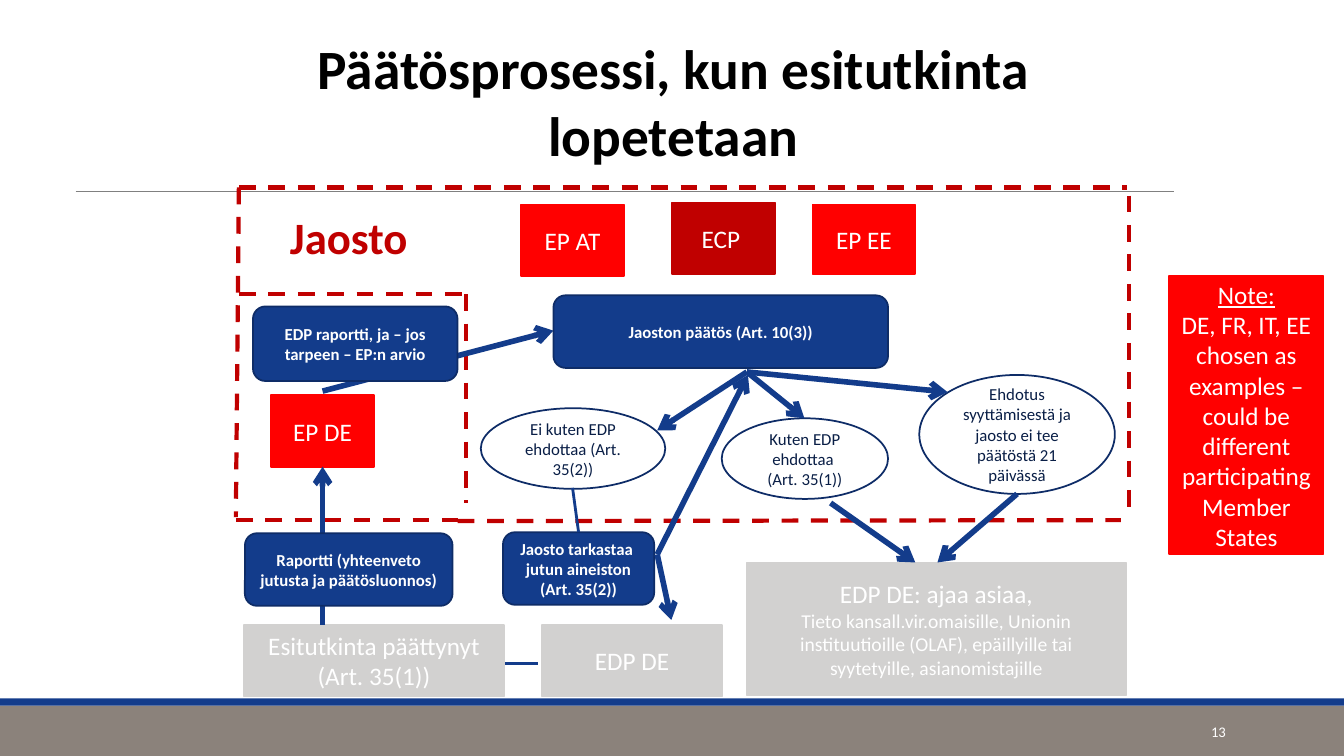
"""Builds the slide on the decision process when an investigation ends."""
from lxml.etree import SubElement
from pptx import Presentation
from pptx.dml.color import RGBColor
from pptx.enum.dml import MSO_LINE
from pptx.enum.shapes import MSO_CONNECTOR, MSO_SHAPE
from pptx.enum.text import MSO_ANCHOR, PP_ALIGN
from pptx.oxml.ns import qn
from pptx.util import Inches, Pt

COLS, ROWS, CELL = 133.33, 75, 0.1
FONT = "Calibri"
COLORS = {
    "white": "FFFFFF", "black": "000000", "blue": "133C8B", "navy": "0E2C67",
    "ink": "091E46", "red": "FF0000", "dark": "C00000", "gray": "D2D1D0",
    "rule": "808080", "foot": "8B827B",
}


def grid(count):
    """Turn a count of grid cells into a length."""
    return Inches(count * CELL)


def color(name):
    """Look up a colour by name."""
    return RGBColor.from_string(COLORS[name])


def write(frame, paras, ink, size, bold=False, align=PP_ALIGN.CENTER):
    """Fill a frame; a paragraph is a text or a (text, changes) pair."""
    for index, para in enumerate(paras):
        text, change = (para, {}) if isinstance(para, str) else para
        line = frame.paragraphs[0] if index == 0 else frame.add_paragraph()
        line.alignment = align
        for part, piece in enumerate(text.split("\n")):
            if part:
                line.add_line_break()
            run = line.add_run()
            run.text = piece
            font = run.font
            font.name, font.bold = FONT, bold
            font.size = Pt(change.get("size", size))
            font.underline = change.get("under", False)
            font.color.rgb = color(ink)


def label(slide, place, text, ink, size, bold=False, wrap=True,
          anchor=MSO_ANCHOR.TOP, align=PP_ALIGN.CENTER):
    """Add a text box."""
    frame = slide.shapes.add_textbox(*map(grid, place)).text_frame
    frame.word_wrap = wrap
    frame.vertical_anchor = anchor
    write(frame, [text], ink, size, bold, align)


def block(slide, kind, place, fill, edge=None, paras=(), ink="white",
          size=18, bold=False):
    """Add a filled shape with centred text."""
    shape = slide.shapes.add_shape(kind, *map(grid, place))
    shape.shadow.inherit = False
    shape.fill.solid()
    shape.fill.fore_color.rgb = color(fill)
    if edge:
        shape.line.color.rgb = color(edge)
        shape.line.width = Pt(1.25)
    else:
        shape.line.fill.background()
    frame = shape.text_frame
    frame.word_wrap = True
    frame.vertical_anchor = MSO_ANCHOR.MIDDLE
    write(frame, paras, ink, size, bold)


def box(slide, place, fill, *paras):
    """Add a plain box for an actor or a note."""
    block(slide, MSO_SHAPE.RECTANGLE, place, fill, fill, paras)


def step(slide, place, text):
    """Add a rounded blue box for a step."""
    block(slide, MSO_SHAPE.ROUNDED_RECTANGLE, place, "blue", "navy", [text],
          size=12, bold=True)


def result(slide, place, text):
    """Add a white ellipse for an outcome."""
    block(slide, MSO_SHAPE.OVAL, place, "white", "navy", [text], "ink", 12)


def link(slide, ends, ink="blue", width=4.0, dash=False, arrow=False):
    """Add a straight line, dashed or with an arrowhead if asked."""
    line = slide.shapes.add_connector(MSO_CONNECTOR.STRAIGHT, *map(grid, ends))
    line.line.color.rgb = color(ink)
    line.line.width = Pt(width)
    if dash:
        line.line.dash_style = MSO_LINE.DASH
    props = line._element.spPr
    if arrow:
        SubElement(props.find(qn("a:ln")), qn("a:tailEnd"), type="arrow")
    SubElement(props, qn("a:effectLst"))


def frame(slide):
    """Draw the footer bars, the rule, the title and the page number."""
    block(slide, MSO_SHAPE.RECTANGLE, (0, 70, COLS, 5), "foot")
    block(slide, MSO_SHAPE.RECTANGLE, (0, 69.3, COLS, 0.7), "blue")
    link(slide, (7.5, 19, 116.5, 19), "rule", 0.5)
    label(slide, (21.8, 2.9, 90, 12.5),
          "Päätösprosessi, kun esitutkinta lopetetaan", "black", 39.6, True)
    label(slide, (108.3, 70.6, 14.3, 4), "13", "white", 10.5,
          anchor=MSO_ANCHOR.MIDDLE, align=PP_ALIGN.RIGHT)


def chamber(slide):
    """Draw the dashed border of the chamber and its name."""
    left, right, top, base = 23.7, 112, 18.6, 51.6
    notch, mid = 46.2, 29.2
    for ends in ((45.4, 51.7, 111.2, base), (23.4, base, 45.4, base),
                 (left, top, 111.8, top), (left, mid, notch, mid),
                 (left, top, 23.4, 51.3), (right, 19.4, right, 51.3),
                 (notch, mid, notch, 49.9)):
        link(slide, ends, "dark", 3, dash=True)
    label(slide, (27.7, 20.3, 13.8, 6.4), "Jaosto", "dark", 32, True, False)


def actors(slide):
    """Place the prosecutors, the final states and the note."""
    wide, high = 10.2, 7.1
    box(slide, (26.9, 39.2, wide, high), "red", "EP DE")
    box(slide, (51.7, 20.3, wide, high), "red", "EP AT")
    box(slide, (66.7, 20.1, wide, high), "dark", "ECP ")
    box(slide, (80.6, 20.3, wide, 6.9), "red", "EP EE")
    box(slide, (24.2, 62, 25.8, high), "gray",
        "Esitutkinta päättynyt (Art. 35(1))")
    box(slide, (53.8, 62, 17.8, high), "gray", "EDP DE")
    box(slide, (74.1, 55.8, 37.6, 13.2), "gray", "EDP DE: ajaa asiaa,",
        ("Tieto kansall.vir.omaisille, Unionin instituutioille (OLAF), "
         "epäillyille tai syytetyille, asianomistajille", {"size": 14}))
    box(slide, (116, 27.4, 15.3, 27.6), "red", ("Note:", {"under": True}),
        "DE, FR, IT, EE chosen as examples – could be different "
        "participating Member States")


def process(slide):
    """Place the steps and outcomes between the arrows that join them."""
    fork, check = (74.1, 36.9), (65.2, 55)
    for ends in ((32, 62, 32, 46.3), (32, 38.8, 54.9, 32.8),
                 (*fork, 65.2, 42.7)):
        link(slide, ends, arrow=True)
    step(slide, (24.3, 52.9, 20.6, 7.2),
         "Raportti (yhteenveto jutusta ja päätösluonnos)")
    step(slide, (25.1, 30.4, 20.3, 7.4),
         "EDP raportti, ja – jos tarpeen – EP:n arvio")
    step(slide, (54.9, 29.3, 33.2, 7.2), "Jaoston päätös (Art. 10(3))")
    step(slide, (49.9, 52.8, 15, 7.2),
         "Jaosto tarkastaa \njutun aineiston\n(Art. 35(2))")
    result(slide, (47.7, 40.5, 18.3, 8), "Ei kuten EDP ehdottaa (Art. 35(2))")
    result(slide, (71.6, 41.5, 16.5, 8), "Kuten EDP ehdottaa \n(Art. 35(1))")
    result(slide, (91.2, 37.2, 19.4, 11.8),
           "Ehdotus syyttämisestä ja jaosto ei tee päätöstä 21 päivässä")
    for ends in ((*fork, 79.8, 41.5), (*fork, 94, 38.9),
                 (100.9, 49, 93, 55.8), (82.4, 49.9, 90.8, 55.8),
                 (*check, 66.6, 61.5), (*check, 74.2, 37.2)):
        link(slide, ends, arrow=True)
    for ends in ((50.1, 65.8, 53.4, 65.8), (57.4, 52.8, 56.8, 48.4)):
        link(slide, ends, width=2)


def main():
    """Build and save the deck."""
    deck = Presentation()
    deck.slide_width, deck.slide_height = grid(COLS), grid(ROWS)
    slide = deck.slides.add_slide(deck.slide_layouts[6])
    for draw in (frame, chamber, actors, process):
        draw(slide)
    deck.save("out.pptx")


if __name__ == "__main__":
    main()
